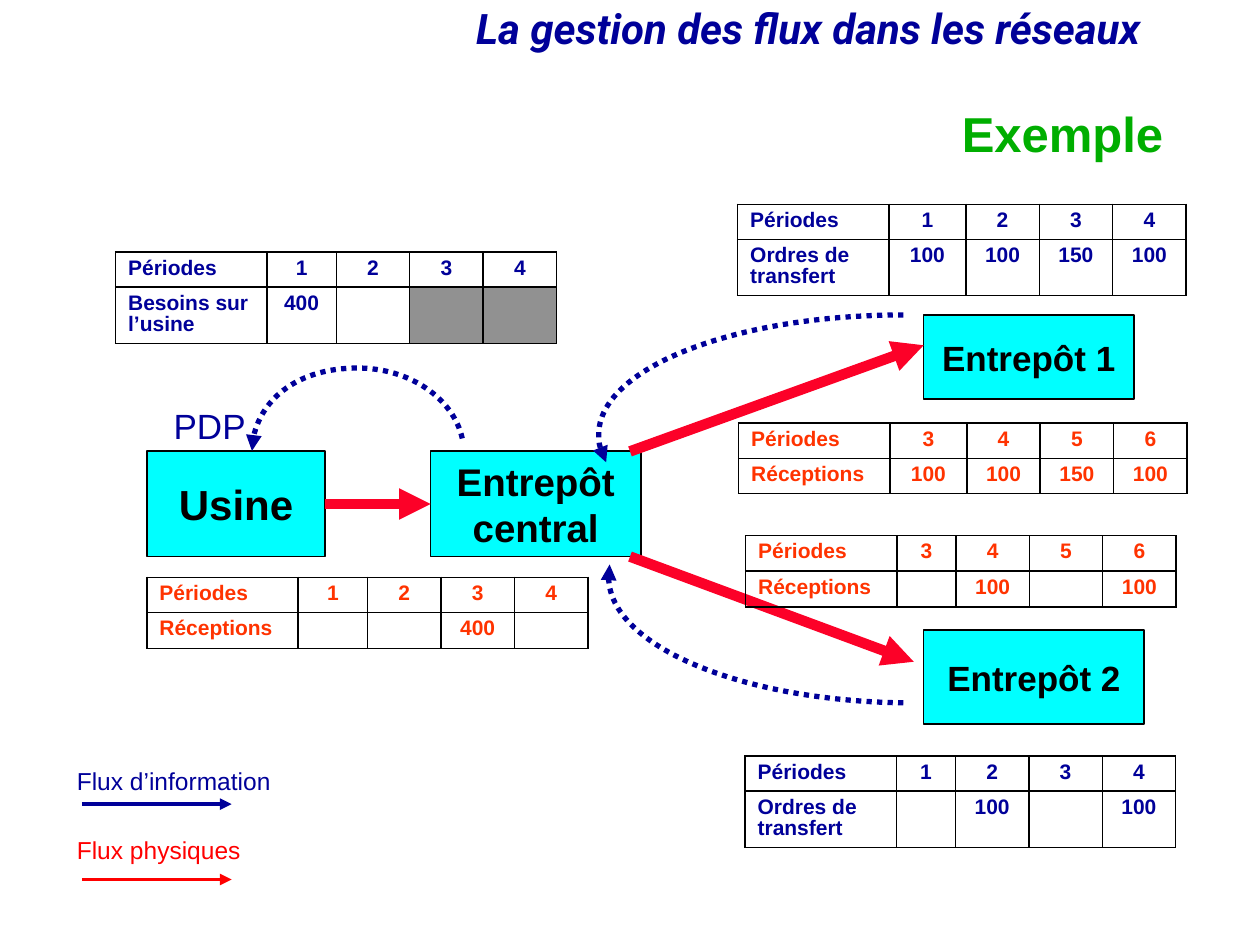
from lxml.etree import SubElement
from pptx import Presentation
from pptx.dml.color import RGBColor
from pptx.enum.dml import MSO_LINE
from pptx.enum.shapes import MSO_CONNECTOR, MSO_SHAPE
from pptx.enum.text import MSO_ANCHOR, PP_ALIGN
from pptx.oxml.ns import qn
from pptx.util import Cm, Pt

THEME = {
    "navy": "000099", "orange": "FF3300", "green": "00AE00", "cyan": "00FFFF",
    "crimson": "FC0128", "red": "FF0000", "grey": "919191", "black": "000000",
    "body": "Arial", "banner": "Roboto",
    "banner size": 24, "title size": 28, "label size": 20,
    "legend size": 14, "table size": 12,
}

# Content: lengths in centimetres
BANNER = ("La gestion des flux dans les réseaux", (9.35, 0.05, 16.1, 1.17))
TITLE = ("Exemple", (3.58, 2.12, 20.12, 1.27))

# Name: lines, place, type size
SITES = {
    "entrepôt 1": (["Entrepôt 1"], (18.62, 6.35, 4.24, 1.7), 20),
    "entrepôt 2": (["Entrepôt 2"], (18.62, 12.7, 4.45, 1.9), 20),
    "central": (["Entrepôt", "central"], (8.68, 9.1, 4.24, 2.12), 22),
    "usine": (["Usine"], (2.96, 9.1, 3.6, 2.12), 24),
}

# Start, end, colour, width
ARROWS = [
    ((12.7, 9.1), (18.62, 6.96), "crimson", 6),
    ((12.7, 11.22), (18.42, 13.34), "crimson", 6),
    ((1.65, 16.21), (4.67, 16.21), "navy", 2.25),
    ((1.65, 17.73), (4.67, 17.73), "red", 2.25),
]

# Start, then Bézier pieces of two control points and an end
INFORMATION_CURVES = [
    ((18.21, 6.35), [((14.81, 6.35), (12.07, 7.42), (12.07, 8.76)),
                     ((12.07, 8.94), (12.12, 9.14), (12.22, 9.32))]),
    ((18.21, 14.17), [((14.91, 14.12), (12.27, 13), (12.27, 11.63)),
                      ((12.27, 11.56), (12.27, 11.46), (12.29, 11.38))]),
    ((9.32, 8.84), [((9.14, 8.03), (8.26, 7.42), (7.21, 7.42)),
                    ((6.02, 7.42), (5.08, 8.18), (5.08, 9.09))]),
]

# Left, top, width of first period, colour, first period, row label, values
# (None marks a greyed cell)
TABLES = [
    (14.87, 4.12, 1.55, "navy", 1, "Ordres de transfert", ["100", "100", "150", "100"]),
    (15.02, 15.24, 1.19, "navy", 1, "Ordres de transfert", ["", "100", "", "100"]),
    (2.33, 5.08, 1.4, "navy", 1, "Besoins sur l’usine", ["400", "", None, None]),
    (2.96, 11.64, 1.4, "orange", 3 - 2, "Réceptions", ["", "", "400", ""]),
    (14.89, 8.53, 1.55, "orange", 3, "Réceptions", ["100", "100", "150", "100"]),
    (15.03, 10.8, 1.19, "orange", 3, "Réceptions", ["", "100", "", "100"]),
]
LABEL_WIDTH, PERIOD_WIDTH, ROW_HEIGHT, BOTTOM_MARGIN = 3.05, 1.48, 0.71, 0.09

LABELS = [
    ("Flux d’information", (1.3, 15.32, 4.45, 0.86), "legend size", "navy"),
    ("Flux physiques", (1.3, 16.71, 3.84, 0.86), "legend size", "red"),
    ("PDP", (3.25, 8.03, 1.98, 1.12), "label size", "navy"),
]


def color(name):
    return RGBColor.from_string(THEME[name])


def set_all(target, values):
    for name, value in values.items():
        setattr(target, name, value)


def write(paragraph, text, size, color_name, font="body", align=PP_ALIGN.LEFT,
          spacing=1.0, **format_values):
    set_all(paragraph, {"alignment": align, "line_spacing": spacing})
    run = paragraph.add_run()
    run.text = text
    set_all(run.font, {"name": THEME[font], "size": Pt(size), **format_values})
    run.font.color.rgb = color(color_name)


def add_arrowhead(shape):
    line = shape._element.spPr.find(qn("a:ln"))
    SubElement(line, qn("a:tailEnd"), type="triangle")


def add_arrow(shapes, start, end, color_name, width):
    connector = shapes.add_connector(MSO_CONNECTOR.STRAIGHT,
                                     *map(Cm, start), *map(Cm, end))
    connector.line.color.rgb = color(color_name)
    connector.line.width = Pt(width)
    add_arrowhead(connector)
    SubElement(connector._element.spPr, qn("a:effectLst"))
    return connector


def add_curve(shapes, start, pieces):
    builder = shapes.build_freeform(*map(Cm, start))
    points = [tuple(map(Cm, point)) for piece in pieces for point in piece]
    builder.add_line_segments(points, close=False)
    curve = builder.convert_to_shape()
    # Turn every three straight segments into one Bézier segment
    segments = list(curve._element.iter(qn("a:lnTo")))
    outline = segments[0].getparent()
    for index, segment in enumerate(segments):
        if index % 3 == 0:
            bezier = SubElement(outline, qn("a:cubicBezTo"))
        bezier.append(segment[0])
        outline.remove(segment)
    curve.shadow.inherit = False
    curve.fill.background()
    curve.line.color.rgb = color("navy")
    set_all(curve.line, {"width": Pt(3), "dash_style": MSO_LINE.ROUND_DOT})
    add_arrowhead(curve)


def add_site(shapes, lines, place, size):
    site = shapes.add_shape(MSO_SHAPE.RECTANGLE, *map(Cm, place))
    site.shadow.inherit = False
    site.fill.solid()
    site.fill.fore_color.rgb = color("cyan")
    site.line.color.rgb = color("black")
    site.line.width = Pt(1)
    frame = site.text_frame
    set_all(frame, {"word_wrap": False, "vertical_anchor": MSO_ANCHOR.MIDDLE})
    for index, text in enumerate(lines):
        paragraph = frame.add_paragraph() if index else frame.paragraphs[0]
        write(paragraph, text, size, "black", align=PP_ALIGN.CENTER, bold=True)
    return site


def add_borders(cell):
    properties = cell._tc.get_or_add_tcPr()
    for side in ("lnL", "lnR", "lnT", "lnB"):
        border = SubElement(properties, qn(f"a:{side}"), w=str(Pt(1)))
        fill = SubElement(border, qn("a:solidFill"))
        SubElement(fill, qn("a:srgbClr"), val=THEME["black"])


def fill_cell(cell, text, color_name, align):
    add_borders(cell)
    cell.margin_bottom = Cm(BOTTOM_MARGIN)
    if text is None:
        cell.fill.solid()
        cell.fill.fore_color.rgb = color("grey")
    else:
        cell.fill.background()
    paragraph = cell.text_frame.paragraphs[0]
    size = THEME["table size"]
    if text:
        write(paragraph, text, size, color_name, align=align, spacing=0.9, bold=True)
    else:
        paragraph.line_spacing = 0.9
        SubElement(paragraph._p, qn("a:endParaRPr"), sz=str(size * 100))


def add_period_table(shapes, left, top, first_width, color_name, first_period, label, values):
    periods = [str(first_period + index) for index in range(len(values))]
    rows = [["Périodes", *periods], [label, *values]]
    widths = [LABEL_WIDTH, first_width] + [PERIOD_WIDTH] * (len(values) - 1)
    table = shapes.add_table(len(rows), len(widths), Cm(left), Cm(top),
                             Cm(sum(widths)), Cm(ROW_HEIGHT * len(rows))).table
    set_all(table, {"first_row": False, "horz_banding": False})
    for column, width in zip(table.columns, widths):
        column.width = Cm(width)
    for row_index, row in enumerate(rows):
        table.rows[row_index].height = Cm(ROW_HEIGHT)
        for column_index, text in enumerate(row):
            align = PP_ALIGN.CENTER if column_index else PP_ALIGN.LEFT
            fill_cell(table.cell(row_index, column_index), text, color_name, align)


def add_label(shapes, text, place, size, color_name, **format_values):
    box = shapes.add_textbox(*map(Cm, place))
    box.text_frame.word_wrap = False
    write(box.text_frame.paragraphs[0], text, THEME[size], color_name, **format_values)


def main():
    presentation = Presentation()
    set_all(presentation, {"slide_width": Cm(25.4), "slide_height": Cm(19.05)})
    slide = presentation.slides.add_slide(presentation.slide_layouts[5])
    shapes = slide.shapes

    # Banner and title
    add_label(shapes, *BANNER, "banner size", "navy", font="banner", spacing=0.9,
              bold=True, italic=True)
    text, place = TITLE
    title = shapes.title
    set_all(title, dict(zip(("left", "top", "width", "height"), map(Cm, place))))
    title.text_frame.vertical_anchor = MSO_ANCHOR.MIDDLE
    write(title.text_frame.paragraphs[0], text, THEME["title size"], "green",
          align=PP_ALIGN.RIGHT, spacing=0.9, bold=True)

    # Sites and flows
    sites = {name: add_site(shapes, *site) for name, site in SITES.items()}
    for arrow in ARROWS:
        add_arrow(shapes, *arrow)
    supply = add_arrow(shapes, (6.56, 10.16), (8.68, 10.16), "crimson", 6)
    supply.begin_connect(sites["usine"], 3)
    supply.end_connect(sites["central"], 1)
    for curve in INFORMATION_CURVES:
        add_curve(shapes, *curve)

    # Tables and labels
    for table in TABLES:
        add_period_table(shapes, *table)
    for label in LABELS:
        add_label(shapes, *label)

    presentation.save("out.pptx")


if __name__ == "__main__":
    main()
